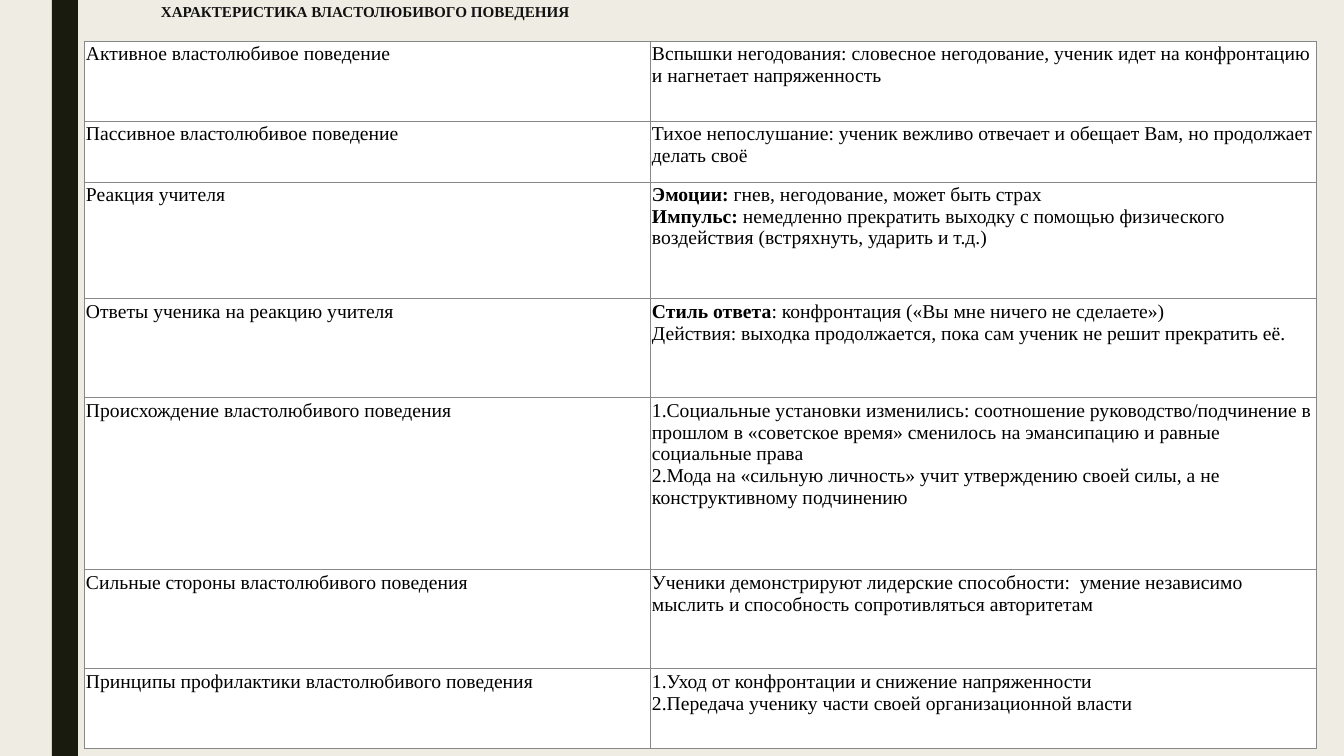
"""Build a slide with a two-column table on power-seeking behaviour."""
from lxml import etree
from pptx import Presentation
from pptx.dml.color import RGBColor
from pptx.enum.shapes import MSO_SHAPE
from pptx.enum.text import MSO_ANCHOR
from pptx.oxml.ns import qn
from pptx.util import Pt

RECT = MSO_SHAPE.RECTANGLE
TOP = MSO_ANCHOR.TOP
CREAM = RGBColor(0xEF, 0xED, 0xE3)
DARK = RGBColor(0x19, 0x1B, 0x0E)
INK = RGBColor(0x11, 0x11, 0x11)
BLACK = RGBColor(0, 0, 0)
WHITE = RGBColor(0xFF, 0xFF, 0xFF)
GREY = RGBColor(0x88, 0x88, 0x88)
FONT = "Times New Roman"
SCALE = 914400 / 100.8
SIDES = ("a:lnL", "a:lnR", "a:lnT", "a:lnB")
COLS = (566, 666)
ROWS = (
    (80, "Активное властолюбивое поведение", False, (
        ("", "Вспышки негодования: словесное негодование, ученик идет на "
         "конфронтацию и нагнетает напряженность"),)),
    (61, "Пассивное властолюбивое поведение", False, (
        ("", "Тихое непослушание: ученик вежливо отвечает и обещает Вам, "
         "но продолжает делать своё"),)),
    (117, "Реакция учителя", False, (
        ("Эмоции:", " гнев, негодование, может быть страх"),
        ("Импульс:", " немедленно прекратить выходку с помощью физического "
         "воздействия (встряхнуть, ударить и т.д.)"))),
    (99, "Ответы ученика на реакцию учителя", False, (
        ("Стиль ответа", ": конфронтация («Вы мне ничего не сделаете»)"),
        ("", "Действия: выходка продолжается, пока сам ученик не решит "
         "прекратить её."))),
    (172, "Происхождение властолюбивого поведения", True, (
        ("", "Социальные установки изменились: соотношение "
         "руководство/подчинение в прошлом в «советское время» сменилось "
         "на эмансипацию и равные социальные права"),
        ("", "Мода на «сильную личность» учит утверждению своей силы, а не "
         "конструктивному подчинению"))),
    (99, "Сильные стороны властолюбивого поведения", False, (
        ("", "Ученики демонстрируют лидерские способности:  умение "
         "независимо мыслить и способность сопротивляться авторитетам"),)),
    (80, "Принципы профилактики властолюбивого поведения", True, (
        ("", "Уход от конфронтации и снижение напряженности"),
        ("", "Передача ученику части своей организационной власти"))),
)


def px(n):
    return round(n * SCALE)


def fill_cell(cell, lines, listed):
    cell.margin_left = cell.margin_right = px(2)
    cell.margin_top = cell.margin_bottom = px(2)
    cell.vertical_anchor = TOP
    props = cell._tc.get_or_add_tcPr()
    for side in SIDES:
        edge = etree.SubElement(props, qn(side), w=str(Pt(0.75)))
        paint = etree.SubElement(edge, qn("a:solidFill"))
        etree.SubElement(paint, qn("a:srgbClr"), val=str(GREY))
    cell.fill.solid()
    cell.fill.fore_color.rgb = WHITE
    frame = cell.text_frame
    frame.text = "\n".join(head for head, rest in lines)
    for para, (head, rest) in zip(frame.paragraphs, lines):
        para.add_run().text = rest
        for run in para.runs:
            run.font.name = FONT
            run.font.size = Pt(14)
            run.font.color.rgb = BLACK
            run.font.bold = run.text == head
        if listed:
            rule = para._p.get_or_add_pPr()
            etree.SubElement(rule, qn("a:buFont"), typeface="+mj-lt")
            etree.SubElement(rule, qn("a:buAutoNum"), type="arabicPeriod")


deck = Presentation()
deck.slide_width, deck.slide_height = px(1344), px(756)
slide = deck.slides.add_slide(deck.slide_layouts[6])
slide.background.fill.solid()
slide.background.fill.fore_color.rgb = CREAM

bar = slide.shapes.add_shape(RECT, px(52), 0, px(26), px(756))
bar.shadow.inherit = False
bar.fill.solid()
bar.fill.fore_color.rgb = DARK
bar.line.fill.background()

title = slide.shapes.add_textbox(px(151), 0, px(1058), px(41))
frame = title.text_frame
frame.word_wrap = True
frame.vertical_anchor = TOP
frame.text = "ХАРАКТЕРИСТИКА ВЛАСТОЛЮБИВОГО ПОВЕДЕНИЯ"
para = frame.paragraphs[0]
para.line_spacing = 0.89
font = para.runs[0].font
font.name, font.size, font.bold = FONT, Pt(10.8), True
font.color.rgb = INK

grid = slide.shapes.add_table(
    len(ROWS), len(COLS), px(84), px(41),
    px(sum(COLS)), px(sum(row[0] for row in ROWS)))
table = grid.table
table.first_row = table.horz_banding = False
for col, width in zip(table.columns, COLS):
    col.width = px(width)
for row, (high, topic, listed, lines) in zip(table.rows, ROWS):
    row.height = px(high)
    fill_cell(row.cells[0], (("", topic),), False)
    fill_cell(row.cells[1], lines, listed)

deck.save("out.pptx")
